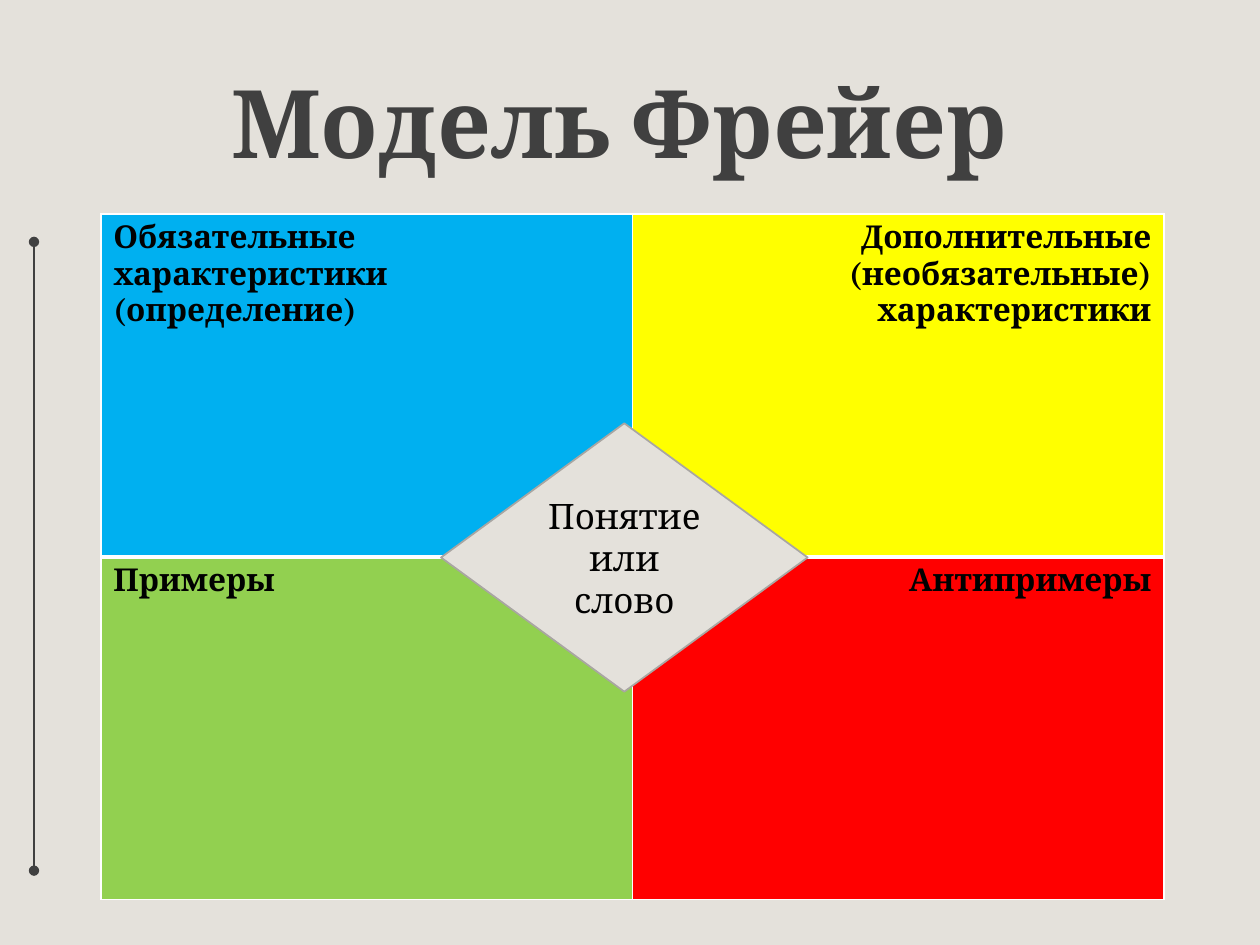
import pptx
import pptx.dml.color
import pptx.enum.shapes
import pptx.enum.text
import pptx.oxml
import pptx.oxml.ns
import pptx.util
from lxml import etree

Inches = pptx.util.Inches
Pt = pptx.util.Pt
Align = pptx.enum.text.PP_ALIGN
Anchor = pptx.enum.text.MSO_ANCHOR
qn = pptx.oxml.ns.qn

FONT = "Cambria"
COLORS = {
    "background": "E4E1DB",
    "heading": "404040",
    "text": "010101",
    "border": "FFFFFF",
    "outline": "A9A6A2",
    "required": "00B0F0",
    "optional": "FFFF00",
    "examples": "92D050",
    "antiexamples": "FF0000",
}
QUADRANTS = [
    [("Обязательные характеристики (определение)", "required"),
     ("Дополнительные (необязательные) характеристики", "optional")],
    [("Примеры", "examples"), ("Антипримеры", "antiexamples")],
]


def color(name):
    return pptx.dml.color.RGBColor.from_string(COLORS[name])


def fill_solid(target, name):
    target.fill.solid()
    target.fill.fore_color.rgb = color(name)


def write_text(text_frame, text, size, color_name, alignment, bold=False):
    text_frame.word_wrap = True
    paragraph = text_frame.paragraphs[0]
    paragraph.text = text
    paragraph.alignment = alignment
    font = paragraph.font
    font.name = FONT
    font.size = Pt(size)
    font.bold = bold
    font.color.rgb = color(color_name)
    return paragraph


def add_side_line(slide):
    line = slide.shapes.add_connector(
        pptx.enum.shapes.MSO_CONNECTOR.STRAIGHT,
        Inches(0.27), Inches(1.92), Inches(0.27), Inches(6.91))
    line.line.color.rgb = color("heading")
    line.line.width = Pt(1)
    properties = line.line._get_or_add_ln()
    for end in ("a:headEnd", "a:tailEnd"):
        etree.SubElement(properties, qn(end), type="oval")
    etree.SubElement(line._element.spPr, qn("a:effectLst"))


def add_title(slide):
    box = slide.shapes.add_textbox(
        Inches(0.43), Inches(0.29), Inches(8.97), Inches(1.45))
    box.text_frame.vertical_anchor = Anchor.MIDDLE
    paragraph = write_text(box.text_frame, "Модель Фрейер", 54, "heading",
                           Align.CENTER, True)
    paragraph.line_spacing = 0.9


def set_borders(cell, widths):
    properties = cell._tc.get_or_add_tcPr()
    for index, (side, width) in enumerate(widths.items()):
        border = pptx.oxml.parse_xml(
            f'<a:ln{side} {pptx.oxml.ns.nsdecls("a")} w="{Pt(width)}">'
            f'<a:solidFill><a:srgbClr val="{COLORS["border"]}"/></a:solidFill>'
            f'</a:ln{side}>')
        properties.insert(index, border)


def add_quadrants(slide):
    table = slide.shapes.add_table(
        2, 2, Inches(0.8), Inches(1.7), Inches(8.44), Inches(5.44)).table
    for row_index, row in enumerate(QUADRANTS):
        for column_index, (text, fill_name) in enumerate(row):
            cell = table.cell(row_index, column_index)
            fill_solid(cell, fill_name)
            alignment = Align.RIGHT if column_index else Align.LEFT
            write_text(cell.text_frame, text, 18, "text", alignment, True)
            top, bottom = (3, 1) if row_index else (1, 3)
            set_borders(cell, {"L": 1, "R": 1, "T": top, "B": bottom})


def add_concept(slide):
    diamond = slide.shapes.add_shape(
        pptx.enum.shapes.MSO_SHAPE.DIAMOND,
        Inches(3.5), Inches(3.36), Inches(2.91), Inches(2.13))
    diamond.shadow.inherit = False
    fill_solid(diamond, "background")
    diamond.line.color.rgb = color("outline")
    diamond.line.width = Pt(1)
    diamond.text_frame.vertical_anchor = Anchor.MIDDLE
    write_text(diamond.text_frame, "Понятие или слово", 20, "text",
               Align.CENTER)


def main():
    presentation = pptx.Presentation()
    presentation.slide_width = Inches(10)
    presentation.slide_height = Inches(7.5)
    slide = presentation.slides.add_slide(presentation.slide_layouts[6])
    fill_solid(slide.background, "background")
    add_side_line(slide)
    add_title(slide)
    add_quadrants(slide)
    add_concept(slide)
    presentation.save("out.pptx")


if __name__ == "__main__":
    main()
